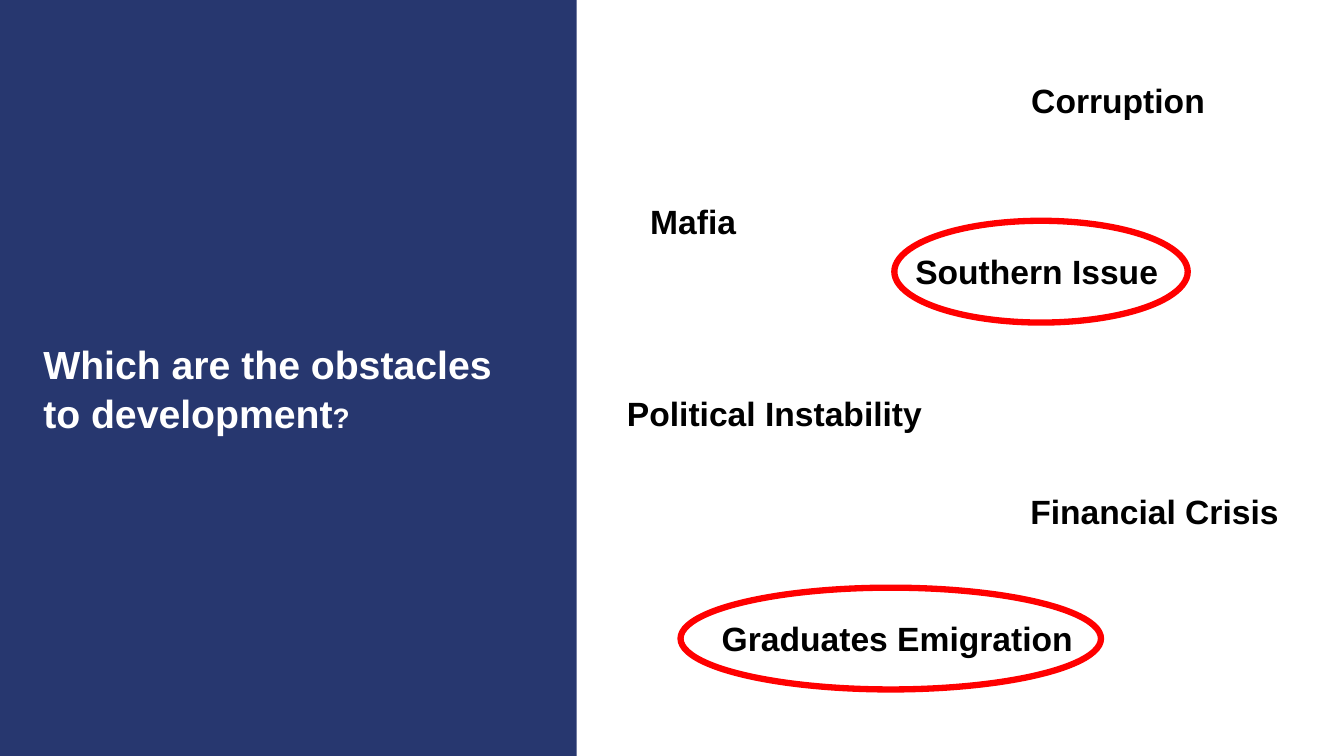
from pptx import Presentation
from pptx.dml.color import RGBColor
from pptx.enum.shapes import MSO_SHAPE as Shape
from pptx.enum.text import MSO_ANCHOR as Anchor, MSO_AUTO_SIZE as AutoSize, PP_ALIGN as Align
from pptx.util import Inches, Pt

NAVY = RGBColor(0x27, 0x37, 0x6F)
WHITE = RGBColor(0xFF, 0xFF, 0xFF)
BLACK = RGBColor(0, 0, 0)
RED = RGBColor(0xFF, 0, 0)

# Obstacle, then left, top, width of its label
OBSTACLES = [
    ("Southern Issue", 8.98, 2.44, 2.63),
    ("Graduates Emigration", 7.06, 6.08, 3.72),
    ("Political Instability", 6.12, 3.85, 3.25),
    ("Mafia", 6.35, 1.94, 1.06),
    ("Corruption", 10.13, 0.74, 1.94),
    ("Financial Crisis", 10.12, 4.82, 2.78),
]
# Left, top, width, height of the rings around the key obstacles
RINGS = [(8.87, 2.19, 2.91, 1.01), (6.75, 5.83, 4.17, 1.01)]


def set_values(target, values):
    for name, value in values.items():
        setattr(target, name, value)


def add_run(paragraph, text, size, color):
    run = paragraph.add_run()
    run.text = text
    set_values(run.font, {"name": "Arial", "size": Pt(size), "bold": True})
    run.font.color.rgb = color


def add_panel(slide):
    panel = slide.shapes.add_shape(Shape.RECTANGLE, 0, 0, Inches(5.72), Inches(7.5))
    panel.shadow.inherit = False
    panel.fill.solid()
    panel.fill.fore_color.rgb = NAVY
    panel.line.fill.background()
    # Put the panel behind the title
    slide.shapes.title.element.addprevious(panel.element)


def format_title(slide):
    title = slide.shapes.title
    set_values(title, {"left": Inches(0.33), "top": Inches(3.36),
                       "width": Inches(4.99), "height": Inches(1)})
    set_values(title.text_frame, {"word_wrap": True, "auto_size": AutoSize.NONE,
                                  "vertical_anchor": Anchor.TOP,
                                  "margin_top": 0, "margin_bottom": 0})
    paragraph = title.text_frame.paragraphs[0]
    set_values(paragraph, {"alignment": Align.LEFT, "line_spacing": 1.04,
                           "space_before": Pt(0)})
    add_run(paragraph, "Which are the obstacles to development", 28, WHITE)
    add_run(paragraph, "?", 20, WHITE)


def add_label(slide, text, left, top, width):
    label = slide.shapes.add_textbox(Inches(left), Inches(top), Inches(width), Inches(0.5))
    set_values(label.text_frame, {"word_wrap": False,
                                  "auto_size": AutoSize.SHAPE_TO_FIT_TEXT})
    add_run(label.text_frame.paragraphs[0], text, 24, BLACK)


def add_ring(slide, *box):
    ring = slide.shapes.add_shape(Shape.OVAL, *map(Inches, box))
    ring.shadow.inherit = False
    ring.fill.background()
    ring.line.color.rgb = RED
    ring.line.width = Pt(4.5)


def main():
    presentation = Presentation()
    set_values(presentation, {"slide_width": Inches(13.33), "slide_height": Inches(7.5)})
    slide = presentation.slides.add_slide(presentation.slide_layouts.get_by_name("Title Only"))

    # Left side: question on a coloured panel
    add_panel(slide)
    format_title(slide)

    # Right side: obstacles, with the key ones ringed
    for obstacle in OBSTACLES:
        add_label(slide, *obstacle)
    for ring in RINGS:
        add_ring(slide, *ring)

    presentation.save("out.pptx")


if __name__ == "__main__":
    main()
